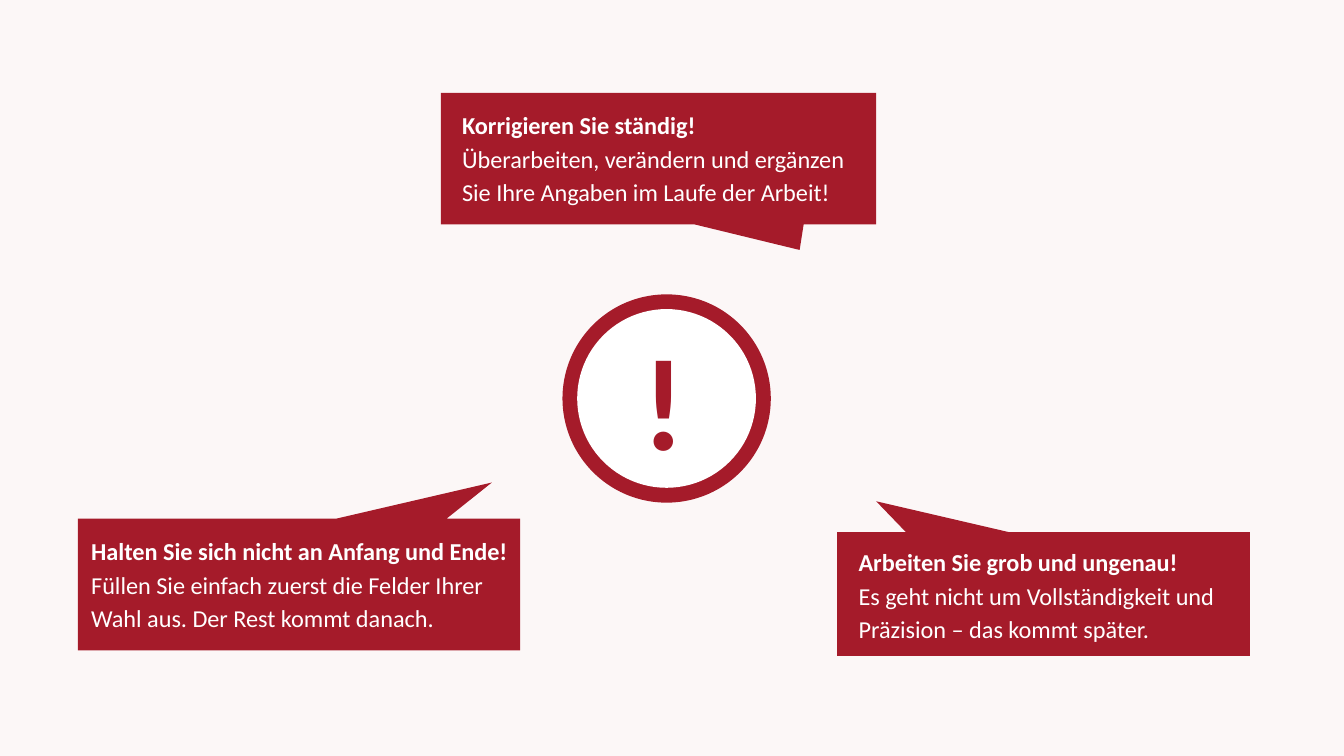
import pptx
import pptx.util
import pptx.dml.color
import pptx.enum.shapes
import pptx.enum.text

COLORS = {"paper": "FCF7F7", "red": "A51B2A", "white": "FFFFFF"}
FONT = "Calibri"
SHAPE = pptx.enum.shapes.MSO_SHAPE


def rgb(name):
    return pptx.dml.color.RGBColor.from_string(COLORS[name])


def add_run(p, text, size=13, color="white", bold=False):
    r = p.add_run()
    r.text = text
    r.font.name = FONT
    r.font.size = pptx.util.Pt(size)
    r.font.bold = bold
    r.font.color.rgb = rgb(color)


class Deck:
    """Holds the style and the current slide; lengths are cells of a 100-column grid."""

    def __init__(self, cols=100, rows=56.25):
        self.prs = pptx.Presentation()
        self.prs.slide_width = pptx.util.Inches(10)
        self.cell = self.prs.slide_width / cols
        self.prs.slide_height = int(rows * self.cell)
        self.s = self.prs.slides.add_slide(self.prs.slide_layouts[6])
        self.s.background.fill.solid()
        self.s.background.fill.fore_color.rgb = rgb("paper")

    def box(self, *cells):
        return [round(c * self.cell) for c in cells]

    def shape(self, kind, x, y, w, h, color):
        sp = self.s.shapes.add_shape(kind, *self.box(x, y, w, h))
        sp.shadow.inherit = False
        sp.fill.solid()
        sp.fill.fore_color.rgb = rgb(color)
        sp.line.fill.background()
        return sp

    def disc(self, cx, cy, d, color):
        return self.shape(SHAPE.OVAL, cx - d / 2, cy - d / 2, d, d, color)

    def textbox(self, x, y, w, h):
        tf = self.s.shapes.add_textbox(*self.box(x, y, w, h)).text_frame
        tf.word_wrap = True
        tf.auto_size = pptx.enum.text.MSO_AUTO_SIZE.SHAPE_TO_FIT_TEXT
        tf.margin_left = tf.margin_right = pptx.util.Inches(0.1)
        tf.margin_top = tf.margin_bottom = pptx.util.Inches(0.1)
        return tf.paragraphs[0]

    def callout(self, area, tip, text_area, head, body):
        sp = self.shape(SHAPE.RECTANGULAR_CALLOUT, *area, "red")
        x, y, w, h = area
        # The tip is stored as an offset from the centre, in shares of the size
        sp.adjustments[0] = (tip[0] - x) / w - 0.5
        sp.adjustments[1] = (tip[1] - y) / h - 0.5
        p = self.textbox(*text_area)
        p.line_spacing = 1.15
        add_run(p, head, bold=True)
        p.add_line_break()
        add_run(p, body)


def main():
    deck = Deck()
    center = (49.6, 29.65)

    # Ring behind the callouts
    deck.disc(*center, 15.5, "red")

    # Callouts: area, tip, text area, heading, advice
    callouts = [
        ((32.8, 6.9, 32.4, 9.8), (59.5, 18.6), (33.4, 6.9, 32.4, 9.2),
         "Korrigieren Sie ständig!",
         "Überarbeiten, verändern und ergänzen Sie Ihre Angaben im Laufe der Arbeit!"),
        ((62.3, 39.6, 30.7, 9.2), (65.2, 37.3), (62.9, 39.4, 29.6, 9.2),
         "Arbeiten Sie grob und ungenau!",
         "Es geht nicht um Vollständigkeit und Präzision – das kommt später."),
        ((5.8, 38.6, 32.9, 9.8), (36.6, 35.9), (5.8, 38.6, 33.5, 9.2),
         "Halten Sie sich nicht an Anfang und Ende!",
         "Füllen Sie einfach zuerst die Felder Ihrer Wahl aus. Der Rest kommt danach."),
    ]
    for callout in callouts:
        deck.callout(*callout)

    # Exclamation mark in the ring
    deck.disc(*center, 13.3, "white")
    add_run(deck.textbox(46.8, 22.8, 5.6, 13.8), "!", size=70, color="red", bold=True)

    deck.prs.save("out.pptx")


if __name__ == "__main__":
    main()
